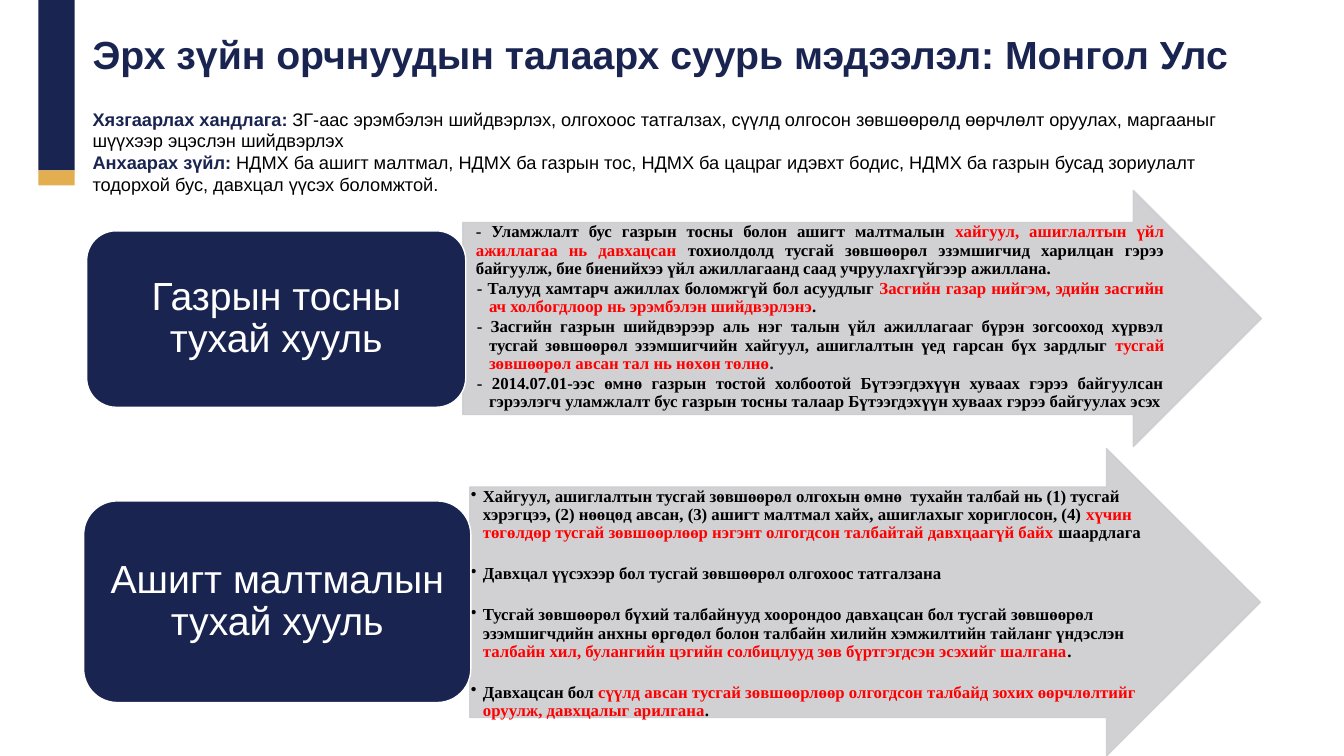
from dataclasses import dataclass

from lxml import etree
from pptx import Presentation
from pptx.dml.color import RGBColor
from pptx.enum.shapes import MSO_SHAPE
from pptx.enum.text import MSO_ANCHOR, PP_ALIGN
from pptx.oxml.ns import qn
from pptx.util import Inches, Pt

NAVY = RGBColor(0x19, 0x24, 0x50)
GOLD = RGBColor(0xE3, 0xAE, 0x50)
GRAY = RGBColor(0xCC, 0xCD, 0xD0)
RED = RGBColor(0xFF, 0, 0)
BLACK = RGBColor(0, 0, 0)
WHITE = RGBColor(0xFF, 0xFF, 0xFF)
RECT, ROUND, ARROW = MSO_SHAPE.RECTANGLE, MSO_SHAPE.ROUNDED_RECTANGLE, MSO_SHAPE.RIGHT_ARROW
TOP, MIDDLE = MSO_ANCHOR.TOP, MSO_ANCHOR.MIDDLE
LEFT, CENTER, JUSTIFY = PP_ALIGN.LEFT, PP_ALIGN.CENTER, PP_ALIGN.JUSTIFY
SERIF = "Times New Roman"
HEAD = 0.5  # arrow head length over arrow height
BODY = 0.75  # arrow shaft height over arrow height

Box = tuple[float, float, float, float]


@dataclass
class Run:
    text: str
    color: RGBColor = BLACK
    bold: bool = True


@dataclass
class Para:
    runs: list[Run]
    margin: float = 0
    indent: float = 0
    bullet: str = ""


@dataclass
class Law:
    name: str
    label: Box
    arrow: Box
    paras: list[Para]
    align: PP_ALIGN
    after: float


def dash(*runs: Run) -> Para:
    return Para(list(runs), 0.25, -0.12)


def dot(*runs: Run) -> Para:
    return Para(list(runs), 0.12, -0.12, "•")


LAWS = [
    Law("Газрын тосны тухай хууль", (0.86, 2.29, 3.76, 1.75), (4.59, 1.89, 7.92, 2.54), [
        Para([
            Run("- Уламжлалт бус газрын тосны болон ашигт малтмалын "),
            Run("хайгуул, ашиглалтын үйл ажиллагаа нь давхацсан ", RED),
            Run("тохиолдолд тусгай зөвшөөрөл эзэмшигчид харилцан гэрээ байгуулж, "
                "бие биенийхээ үйл ажиллагаанд саад учруулахгүйгээр ажиллана."),
        ], 0.12),
        dash(
            Run("- Талууд хамтарч ажиллах боломжгүй бол асуудлыг "),
            Run("Засгийн газар нийгэм, эдийн засгийн ач холбогдлоор нь "
                "эрэмбэлэн шийдвэрлэнэ", RED),
            Run("."),
        ),
        dash(
            Run("- Засгийн газрын шийдвэрээр аль нэг талын үйл ажиллагааг бүрэн "
                "зогсооход хүрвэл тусгай зөвшөөрөл эзэмшигчийн хайгуул, "
                "ашиглалтын үед гарсан бүх зардлыг "),
            Run("тусгай зөвшөөрөл авсан тал нь нөхөн төлнө", RED),
            Run(".", NAVY),
        ),
        dash(
            Run("- 2014.07.01-ээс өмнө газрын тостой холбоотой Бүтээгдэхүүн хуваах "
                "гэрээ байгуулсан гэрээлэгч уламжлалт бус газрын тосны талаар "
                "Бүтээгдэхүүн хуваах гэрээ байгуулах эсэх"),
        ),
    ], JUSTIFY, 1.5),
    Law("Ашигт малтмалын тухай хууль", (0.83, 4.97, 3.84, 2), (4.66, 4.45, 7.84, 3.05), [
        dot(
            Run("Хайгуул, ашиглалтын тусгай зөвшөөрөл олгохын өмнө  тухайн талбай нь "
                "(1) тусгай хэрэгцээ, (2) нөөцөд авсан, (3) ашигт малтмал хайх, "
                "ашиглахыг хориглосон, (4) "),
            Run("хүчин төгөлдөр тусгай зөвшөөрлөөр нэгэнт олгогдсон талбайтай "
                "давхцаагүй байх ", RED),
            Run("шаардлага"),
        ),
        dot(Run("Давхцал үүсэхээр бол тусгай зөвшөөрөл олгохоос татгалзана")),
        dot(
            Run("Тусгай зөвшөөрөл бүхий талбайнууд хоорондоо давхацсан бол тусгай "
                "зөвшөөрөл эзэмшигчдийн анхны өргөдөл болон талбайн хилийн "
                "хэмжилтийн тайланг үндэслэн "),
            Run("талбайн хил, булангийн цэгийн солбицлууд зөв бүртгэгдсэн "
                "эсэхийг шалгана", RED),
            Run("."),
        ),
        dot(
            Run("Давхацсан бол "),
            Run("сүүлд авсан тусгай зөвшөөрлөөр олгогдсон талбайд зохих "
                "өөрчлөлтийг оруулж, давхцалыг арилгана", RED),
            Run("."),
        ),
    ], LEFT, 16.4),
]

TITLE = [Para([Run("Эрх зүйн орчнуудын талаарх суурь мэдээлэл: Монгол Улс", NAVY)])]
INTRO = [
    Para([
        Run("Хязгаарлах хандлага: ", NAVY),
        Run("ЗГ-аас эрэмбэлэн шийдвэрлэх, олгохоос татгалзах, сүүлд олгосон "
            "зөвшөөрөлд өөрчлөлт оруулах, маргааныг шүүхээр эцэслэн шийдвэрлэх",
            BLACK, False),
    ]),
    Para([
        Run("Анхаарах зүйл: ", NAVY),
        Run("НДМХ ба ашигт малтмал, НДМХ ба газрын тос, НДМХ ба цацраг идэвхт бодис, "
            "НДМХ ба газрын бусад зориулалт тодорхой бус, давхцал үүсэх боломжтой.",
            BLACK, False),
    ]),
]


def add_box(slide, kind, box: Box, fill: RGBColor, line: RGBColor | None = None):
    shape = slide.shapes.add_shape(kind, *map(Inches, box))
    shape.shadow.inherit = False
    shape.fill.solid()
    shape.fill.fore_color.rgb = fill
    if line is None:
        shape.line.fill.background()
    else:
        shape.line.color.rgb = line
        shape.line.width = Pt(1)
    return shape


def write(shape, paras: list[Para], *, size: float, font: str = "Arial",
          align: PP_ALIGN = LEFT, anchor: MSO_ANCHOR = TOP, lines: float = 1,
          after: float = 0, insets: Box = (0.1, 0.05, 0.1, 0.05)) -> None:
    frame = shape.text_frame
    frame.word_wrap = True
    frame.vertical_anchor = anchor
    (frame.margin_left, frame.margin_top,
     frame.margin_right, frame.margin_bottom) = map(Inches, insets)
    for i, item in enumerate(paras):
        para = frame.add_paragraph() if i else frame.paragraphs[0]
        para.alignment = align
        para.line_spacing = lines
        para.space_after = Pt(after)
        props = para._p.get_or_add_pPr()
        props.set("marL", str(Inches(item.margin)))
        props.set("indent", str(Inches(item.indent)))
        if item.bullet:
            etree.SubElement(props, qn("a:buChar")).set("char", item.bullet)
        for part in item.runs:
            run = para.add_run()
            run.text = part.text
            run.font.name = font
            run.font.size = Pt(size)
            run.font.bold = part.bold
            run.font.color.rgb = part.color


def fade(shape, percent: int) -> None:
    """Set the opacity of the fill and the line."""
    for color in shape._element.spPr.iter(qn("a:srgbClr")):
        etree.SubElement(color, qn("a:alpha")).set("val", str(percent * 1000))


def add_law(slide, law: Law) -> None:
    arrow = add_box(slide, ARROW, law.arrow, GRAY, GRAY)
    arrow.adjustments[0] = BODY
    arrow.adjustments[1] = HEAD
    fade(arrow, 90)
    write(arrow, law.paras, size=12, font=SERIF, align=law.align, lines=0.9,
          after=law.after, insets=(0.01, 0.01, 0.01, 0.01))
    label = add_box(slide, ROUND, law.label, NAVY, WHITE)
    write(label, [Para([Run(law.name, WHITE, False)])], size=28, align=CENTER,
          anchor=MIDDLE, lines=0.9, insets=(0.12, 0.06, 0.12, 0.06))


def main() -> None:
    deck = Presentation()
    deck.slide_width, deck.slide_height = Inches(13.33), Inches(7.5)
    slide = deck.slides.add_slide(deck.slide_layouts[6])
    add_box(slide, RECT, (0.38, 0, 0.36, 1.69), NAVY)
    add_box(slide, RECT, (0.38, 1.69, 0.36, 0.15), GOLD)
    for law in LAWS:
        add_law(slide, law)
    title = slide.shapes.add_textbox(*map(Inches, (0.82, 0.25, 12.18, 0.88)))
    write(title, TITLE, size=28)
    intro = slide.shapes.add_textbox(*map(Inches, (0.82, 1.02, 11.4, 0.98)))
    write(intro, INTRO, size=13)
    deck.save("out.pptx")


if __name__ == "__main__":
    main()
